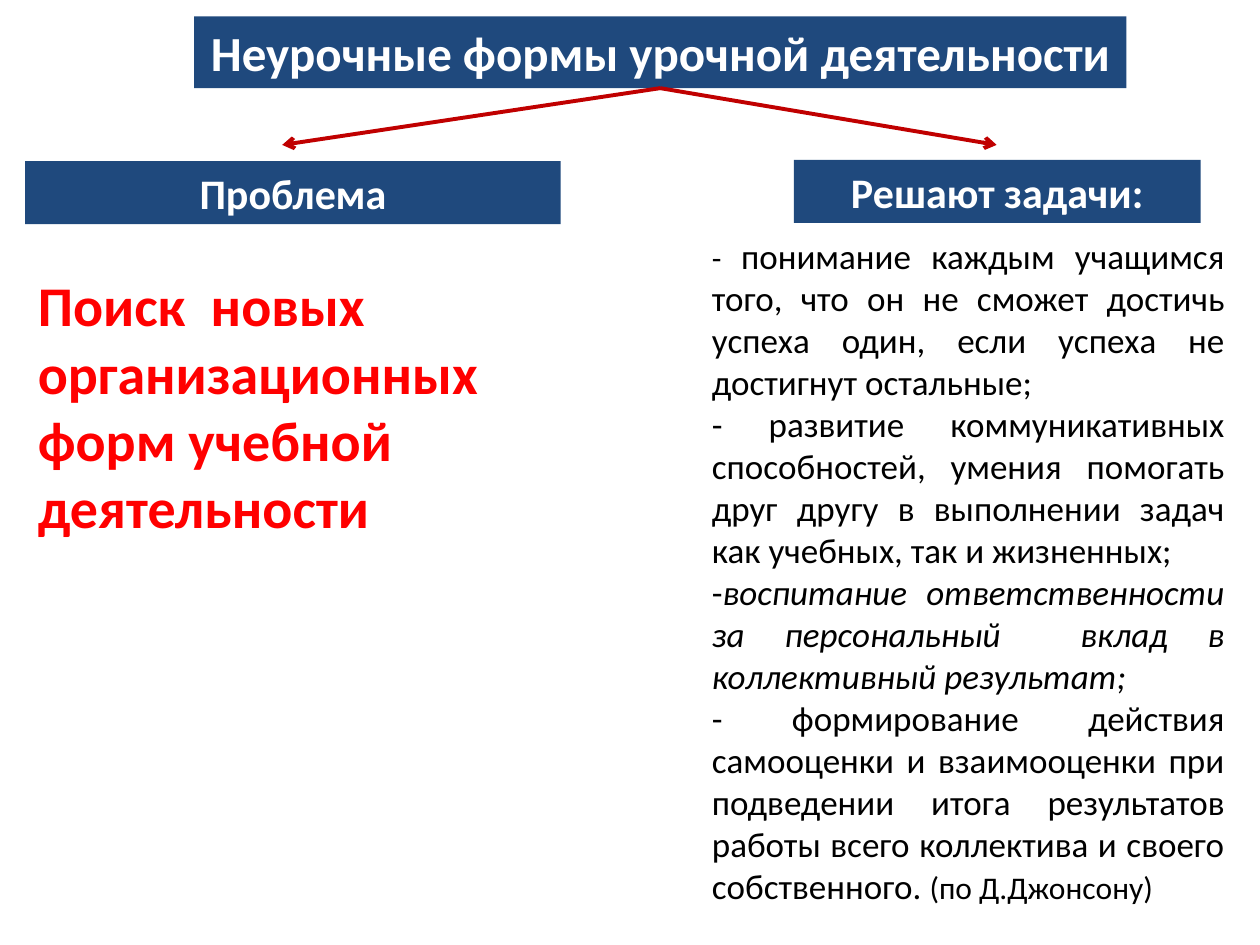
import pptx
import pptx.dml.color
import pptx.enum.shapes
import pptx.enum.text
import pptx.oxml
import pptx.util
from pptx.util import Inches

COLORS = {"navy": "1F497D", "white": "FFFFFF", "black": "000000", "red": "FF0000", "arrow": "C00000"}
ALIGN = pptx.enum.text.PP_ALIGN
ANCHOR = pptx.enum.text.MSO_ANCHOR

TASKS = [
    [("- ", {"size": 18}),
     ("понимание каждым учащимся того, что он не сможет достичь успеха один, "
      "если успеха не достигнут остальные;", {})],
    [("- развитие коммуникативных способностей, умения помогать друг другу "
      "в выполнении задач как учебных, так и жизненных;", {})],
    [("-", {}),
     ("воспитание ответственности за персональный  вклад в коллективный результат;", {"italic": True})],
    [("- формирование действия самооценки и взаимооценки при подведении итога "
      "результатов работы всего коллектива и своего собственного. ", {}),
     ("(по Д.Джонсону)", {"size": 18})],
]


def rgb(name):
    """Return the named colour."""
    return pptx.dml.color.RGBColor.from_string(COLORS[name])


def add_text(paragraph, text, size=20, color="black", bold=False, italic=False):
    """Append a formatted run to a paragraph."""
    run = paragraph.add_run()
    run.text = text
    run.font.name = "Calibri"
    run.font.size = pptx.util.Pt(size)
    run.font.color.rgb = rgb(color)
    run.font.bold = bold
    run.font.italic = italic


def place(shape, left, top, width, height):
    """Set the position and size of a shape in inches."""
    shape.left, shape.top = Inches(left), Inches(top)
    shape.width, shape.height = Inches(width), Inches(height)


def fill_heading(shape, text, size):
    """Turn a shape into a navy heading with centred white text."""
    shape.fill.solid()
    shape.fill.fore_color.rgb = rgb("navy")
    shape.line.fill.background()
    frame = shape.text_frame
    frame.word_wrap = False
    frame.auto_size = pptx.enum.text.MSO_AUTO_SIZE.NONE
    frame.vertical_anchor = ANCHOR.MIDDLE
    frame.paragraphs[0].alignment = ALIGN.CENTER
    add_text(frame.paragraphs[0], text, size=size, color="white", bold=True)


def add_heading(slide, text, left, top, width, height):
    """Add a rectangular column heading."""
    shape = slide.shapes.add_shape(
        pptx.enum.shapes.MSO_SHAPE.RECTANGLE, Inches(left), Inches(top), Inches(width), Inches(height))
    shape.shadow.inherit = False
    fill_heading(shape, text, 24)


def fill_body(shape, paragraphs, alignment, anchor, **defaults):
    """Write unbulleted paragraphs of runs into a body placeholder."""
    frame = shape.text_frame
    frame.word_wrap = True
    frame.auto_size = pptx.enum.text.MSO_AUTO_SIZE.NONE
    frame.vertical_anchor = anchor
    for index, runs in enumerate(paragraphs):
        paragraph = frame.add_paragraph() if index else frame.paragraphs[0]
        paragraph.alignment = alignment
        paragraph.space_before = pptx.util.Pt(0)
        properties = paragraph._p.get_or_add_pPr()
        properties.set("marL", "0")
        properties.set("indent", "0")
        pptx.oxml.ns  # namespace helpers used below
        properties.append(properties.makeelement(pptx.oxml.ns.qn("a:buNone"), {}))
        for text, style in runs:
            add_text(paragraph, text, **{**defaults, **style})


def add_arrow(slide, source, end_x, end_y):
    """Draw an arrow from the bottom middle of a shape to a point."""
    arrow = slide.shapes.add_connector(
        pptx.enum.shapes.MSO_CONNECTOR.STRAIGHT,
        source.left + source.width // 2, source.top + source.height, Inches(end_x), Inches(end_y))
    arrow.begin_connect(source, 2)
    arrow.line.color.rgb = rgb("arrow")
    arrow.line.width = pptx.util.Pt(2.25)
    line = arrow.line._get_or_add_ln()
    line.append(line.makeelement(pptx.oxml.ns.qn("a:tailEnd"), {"type": "arrow"}))
    properties = arrow._element.spPr
    properties.append(properties.makeelement(pptx.oxml.ns.qn("a:effectLst"), {}))


def main():
    """Build and save the slide."""
    presentation = pptx.Presentation()
    presentation.slide_width, presentation.slide_height = Inches(10), Inches(7.5)
    slide = presentation.slides.add_slide(presentation.slide_layouts[3])
    title, problem, tasks = slide.placeholders

    place(title, 1.54, 0.13, 7.4, 0.57)
    fill_heading(title, "Неурочные формы урочной деятельности", 28)
    for end_x in (7.91, 2.24):
        add_arrow(slide, title, end_x, 1.15)

    add_heading(slide, "Проблема", 0.2, 1.28, 4.25, 0.5)
    place(problem, 0.2, 2.1, 4.25, 2.26)
    fill_body(problem, [[("Поиск  новых организационных форм учебной деятельности", {})]],
              ALIGN.LEFT, ANCHOR.TOP, size=32, color="red", bold=True)

    add_heading(slide, "Решают задачи:", 6.3, 1.27, 3.23, 0.5)
    place(tasks, 5.55, 1.78, 4.27, 5.49)
    fill_body(tasks, TASKS, ALIGN.JUSTIFY, ANCHOR.MIDDLE)

    presentation.save("out.pptx")


if __name__ == "__main__":
    main()
